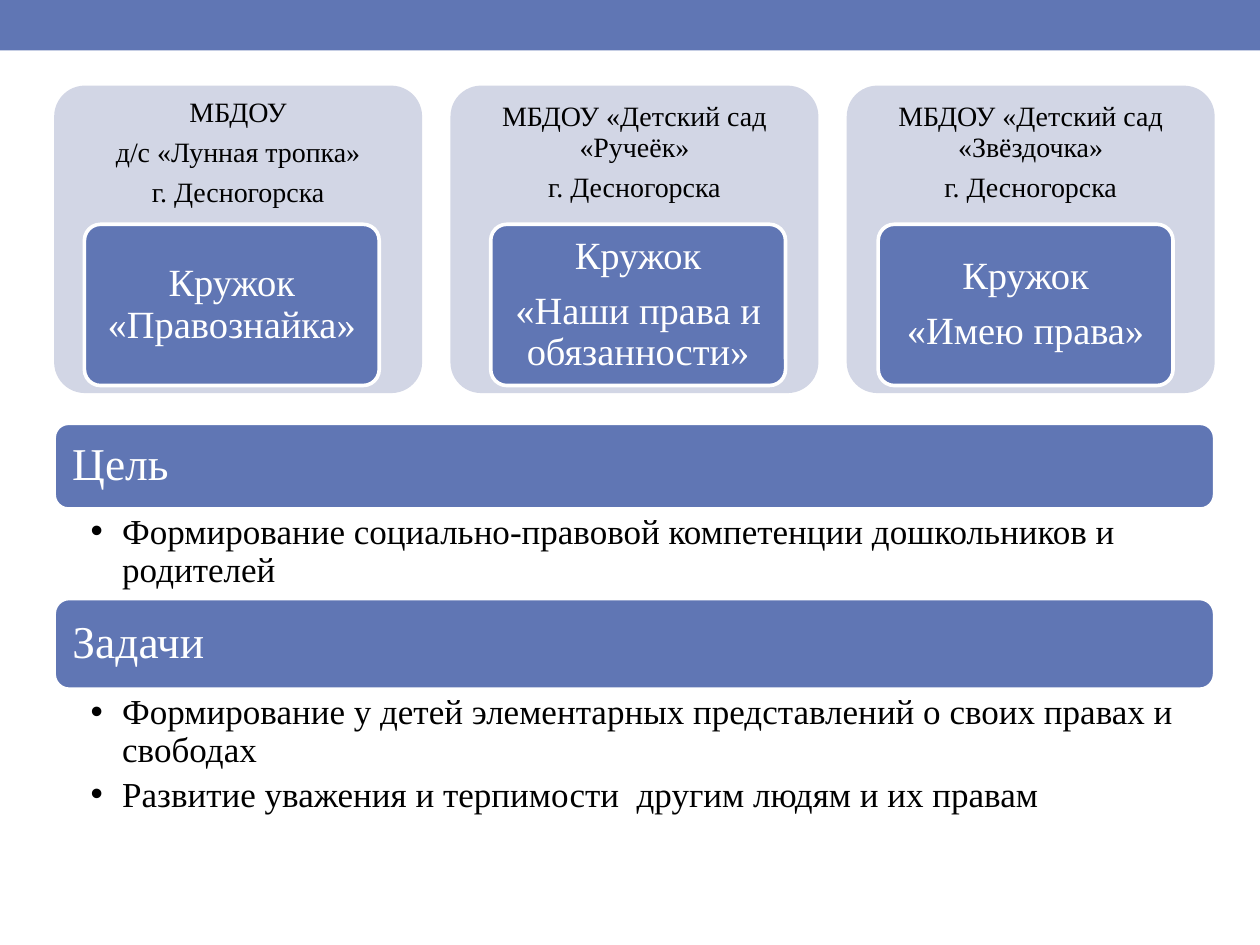
from dataclasses import dataclass

from lxml import etree
from pptx import Presentation
from pptx import util as u
from pptx.dml.color import RGBColor
from pptx.enum import shapes, text
from pptx.oxml.ns import qn

IN = u.Inches


@dataclass(frozen=True)
class Theme:
    font: str = "Times New Roman"
    blue: str = "6076B4"
    pale: str = "D2D6E5"
    white: str = "FFFFFF"
    black: str = "000000"
    outline: float = 2.08
    # (type size, space after) in points
    card: tuple = (16, 5.6)
    club: tuple = (22, 7.7)
    heading: tuple = (26, 9)
    body: tuple = (20, 4)


T = Theme()

CARDS = [  # (kindergarten lines, club lines, left offset of the club box)
    (["МБДОУ", "д/с «Лунная тропка»", "г. Десногорска"],
     ["Кружок «Правознайка»"], 0.24),
    (["МБДОУ «Детский сад «Ручеёк»", "г. Десногорска"],
     ["Кружок", "«Наши права и обязанности»"], 0.32),
    (["МБДОУ «Детский сад «Звёздочка»", "г. Десногорска"],
     ["Кружок", "«Имею права»"], 0.25),
]
SECTIONS = [  # (heading, bullets, top, bar height, list height)
    ("Цель", ["Формирование социально-правовой компетенции дошкольников и родителей"],
     3.36, 0.68, 0.71),
    ("Задачи", ["Формирование у детей элементарных представлений о своих правах и свободах",
                "Развитие уважения и терпимости  другим людям и их правам"],
     4.75, 0.72, 1.11),
]


def add_box(s, kind, box, fill, outlined=False, adj=None):
    sp = s.shapes.add_shape(kind, *map(IN, box))
    sp.shadow.inherit = False
    sp.fill.solid()
    sp.fill.fore_color.rgb = RGBColor.from_string(fill)
    if outlined:
        sp.line.color.rgb = RGBColor.from_string(T.white)
        sp.line.width = u.Pt(T.outline)
    else:
        sp.line.fill.background()
    if adj is not None:
        sp.adjustments[0] = adj
    return sp


def add_bullet(p):
    pPr = p._p.get_or_add_pPr()
    pPr.set("marL", str(IN(0.25)))
    pPr.set("indent", str(-IN(0.25)))
    etree.SubElement(pPr, qn("a:buFont")).set("typeface", "Arial")
    etree.SubElement(pPr, qn("a:buChar")).set("char", "•")


def write(sp, lines, style, color, insets, align=text.PP_ALIGN.CENTER,
          anchor=text.MSO_ANCHOR.MIDDLE, bullets=False):
    tf = sp.text_frame
    left, top, right, bottom = map(IN, insets)
    frame = {"word_wrap": True, "vertical_anchor": anchor, "margin_left": left,
             "margin_top": top, "margin_right": right, "margin_bottom": bottom}
    for name, value in frame.items():
        setattr(tf, name, value)
    size, after = style
    for i, line in enumerate(lines):
        p = tf.paragraphs[0] if i == 0 else tf.add_paragraph()
        layout = {"alignment": align, "line_spacing": 0.9, "space_after": u.Pt(after)}
        for name, value in layout.items():
            setattr(p, name, value)
        if bullets:
            add_bullet(p)
        r = p.add_run()
        r.text = line
        for name, value in {"name": T.font, "size": u.Pt(size)}.items():
            setattr(r.font, name, value)
        r.font.color.rgb = RGBColor.from_string(color)


def club_cards(s, box):
    left, top, width, height = box
    card_w = 2.92
    step = (width - card_w) / (len(CARDS) - 1)
    rounded = shapes.MSO_SHAPE.ROUNDED_RECTANGLE
    for i, (garden, club, offset) in enumerate(CARDS):
        x = left + i * step
        # The bottom inset keeps the kindergarten name above the club box
        card = add_box(s, rounded, (x, top, card_w, height), T.pale, adj=0.1)
        write(card, garden, T.card, T.black, (0.07, 0, 0.07, 1.37))
        inner = add_box(s, rounded, (x + offset, top + 1.1, 2.34, 1.28),
                        T.blue, outlined=True, adj=0.1)
        write(inner, club, T.club, T.white, (0.06, 0.05, 0.06, 0.05))


def section(s, box, heading, bullets, bar_h):
    left, top, width, height = box
    bar = add_box(s, shapes.MSO_SHAPE.ROUNDED_RECTANGLE, (left, top, width, bar_h),
                  T.blue, outlined=True)
    write(bar, [heading], T.heading, T.white, (0.11,) * 4, text.PP_ALIGN.LEFT)
    body = s.shapes.add_textbox(*map(IN, (left, top + bar_h, width, height - bar_h)))
    write(body, bullets, T.body, T.black, (0.29, 0.04, 0.2, 0.04),
          text.PP_ALIGN.LEFT, text.MSO_ANCHOR.TOP, bullets=True)


def main():
    prs = Presentation()
    prs.slide_width, prs.slide_height = IN(10), IN(7.5)
    s = prs.slides.add_slide(prs.slide_layouts[6])
    left, width = 0.43, 9.21

    # Top band
    add_box(s, shapes.MSO_SHAPE.RECTANGLE, (0, 0, 10, 0.4), T.blue)
    # Kindergartens and their clubs
    club_cards(s, (left, 0.68, width, 2.44))
    # Goal and tasks
    for heading, bullets, top, bar_h, list_h in SECTIONS:
        section(s, (left, top, width, bar_h + list_h), heading, bullets, bar_h)

    prs.save("out.pptx")


if __name__ == "__main__":
    main()
